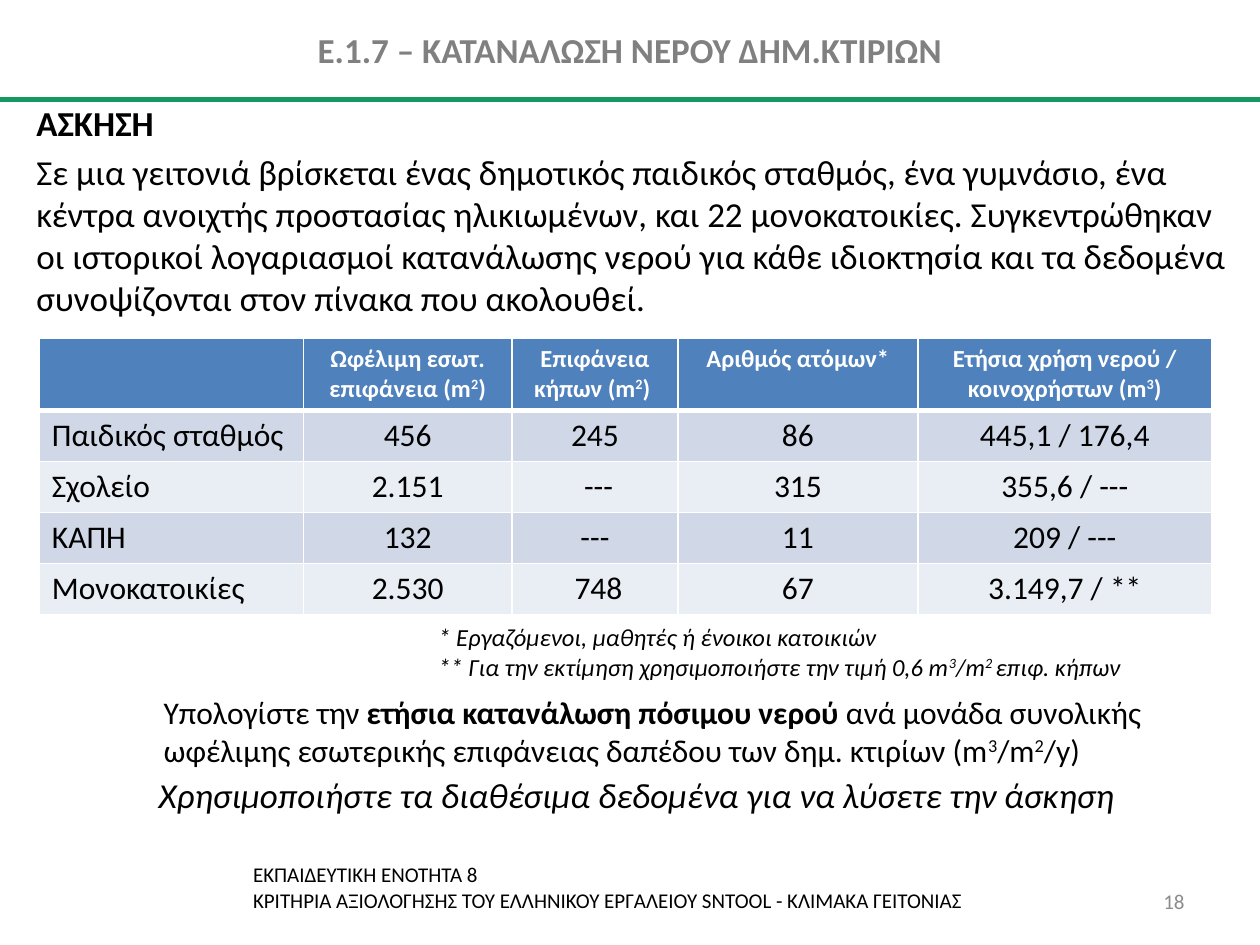
import pptx
import pptx.dml.color
import pptx.enum.shapes
import pptx.enum.text
import pptx.oxml
import pptx.util
from lxml import etree

Pt = pptx.util.Pt
ALIGN = pptx.enum.text.PP_ALIGN
ANCHOR = pptx.enum.text.MSO_ANCHOR
A = "http://schemas.openxmlformats.org/drawingml/2006/main"

HEADERS = [
    [],
    ["Ωφέλιμη εσωτ. επιφάνεια (m", ("2", "sup"), ")"],
    ["Επιφάνεια κήπων (m", ("2", "sup"), ") "],
    ["Αριθμός ατόμων*"],
    ["Ετήσια χρήση νερού / κοινοχρήστων (m", ("3", "sup"), ")"],
]
BUILDINGS = [
    ["Παιδικός σταθμός", "456", "245", "86", "445,1 / 176,4"],
    ["Σχολείο", "2.151", " ---", "315", "355,6 / ---"],
    ["ΚΑΠΗ", "132", "---", "11", "209 / ---"],
    ["Μονοκατοικίες", "2.530", " 748", "67", "3.149,7 / **"],
]
COLUMN_WIDTHS = [151, 119, 95, 137, 168]
HEADER_HEIGHT, ROW_HEIGHT = 41.4, 29.2


def rgb(value):
    return pptx.dml.color.RGBColor.from_string(value)


def write(paragraph, parts, size, color="000000", bold=False, italic=False,
          align=ALIGN.LEFT):
    """Fill a paragraph with plain strings and (text, "sup" or "bold") pairs."""
    paragraph.alignment = align
    font = paragraph.font
    font.name, font.size, font.italic = "Calibri", Pt(size), italic
    font.color.rgb = rgb(color)
    if not any(part[1] == "bold" for part in parts if isinstance(part, tuple)):
        font.bold = bold
    for part in parts:
        text, style = part if isinstance(part, tuple) else (part, None)
        run = paragraph.add_run()
        run.text = text
        if style == "sup":
            run.font._element.set("baseline", "30000")
        elif style == "bold":
            run.font.bold = True


def add_frame(slide, left, top, width, height):
    frame = slide.shapes.add_textbox(Pt(left), Pt(top), Pt(width), Pt(height)).text_frame
    frame.word_wrap = True
    return frame


def add_header(slide, left, top, width, height):
    title = slide.shapes.title
    title.left, title.top, title.width, title.height = map(Pt, (left, top, width, height))
    title.text_frame.vertical_anchor = ANCHOR.MIDDLE
    write(title.text_frame.paragraphs[0], ["Ε.1.7 – ΚΑΤΑΝΑΛΩΣΗ ΝΕΡΟΥ ΔΗΜ.ΚΤΙΡΙΩΝ"], 20,
          "808080", bold=True, align=ALIGN.CENTER)
    # Green rule under the title
    rule = slide.shapes.add_connector(
        pptx.enum.shapes.MSO_CONNECTOR.STRAIGHT,
        Pt(left), Pt(top + height), Pt(left + width), Pt(top + height))
    rule.line.color.rgb = rgb("159961")
    rule.line.width = Pt(3)
    etree.SubElement(rule._element.spPr, f"{{{A}}}effectLst")


def add_exercise(slide, left, top, width, height):
    frame = add_frame(slide, left, top, width, height)
    heading = frame.paragraphs[0]
    heading.line_spacing = 0.8
    write(heading, ["ΑΣΚΗΣΗ"], 20, bold=True)
    story = frame.add_paragraph()
    story.space_before = Pt(4)
    write(story, [
        "Σε μια γειτονιά βρίσκεται ένας δημοτικός παιδικός σταθμός, ένα γυμνάσιο, ένα "
        "κέντρα ανοιχτής προστασίας ηλικιωμένων, και 22 μονοκατοικίες. Συγκεντρώθηκαν "
        "οι ιστορικοί λογαριασμοί κατανάλωσης νερού για κάθε ιδιοκτησία και τα δεδομένα "
        "συνοψίζονται στον πίνακα που ακολουθεί."], 20)


def set_borders(cell, top, bottom):
    properties = cell._tc.get_or_add_tcPr()
    widths = {"lnL": 1, "lnR": 1, "lnT": top, "lnB": bottom}
    for index, (side, width) in enumerate(widths.items()):
        properties.insert(index, pptx.oxml.parse_xml(
            f'<a:{side} xmlns:a="{A}" w="{Pt(width)}"><a:solidFill>'
            f'<a:srgbClr val="FFFFFF"/></a:solidFill></a:{side}>'))


def add_consumption_table(slide, left, top):
    row_count = len(BUILDINGS) + 1
    table = slide.shapes.add_table(
        row_count, len(COLUMN_WIDTHS), Pt(left), Pt(top), Pt(sum(COLUMN_WIDTHS)),
        Pt(HEADER_HEIGHT + ROW_HEIGHT * len(BUILDINGS))).table
    for column, width in zip(table.columns, COLUMN_WIDTHS):
        column.width = Pt(width)
    for r, row in enumerate(table.rows):
        row.height = Pt(ROW_HEIGHT if r else HEADER_HEIGHT)
        for c, cell in enumerate(row.cells):
            cell.fill.solid()
            paragraph = cell.text_frame.paragraphs[0]
            if r == 0:
                cell.fill.fore_color.rgb = rgb("4F81BD")
                write(paragraph, HEADERS[c], 14, "FFFFFF", bold=True, align=ALIGN.CENTER)
            else:
                cell.fill.fore_color.rgb = rgb("D0D8E8" if r % 2 else "E9EDF4")
                write(paragraph, [BUILDINGS[r - 1][c]], 18,
                      align=ALIGN.CENTER if c else ALIGN.LEFT)
                if c < len(COLUMN_WIDTHS) - 1:
                    cell.vertical_anchor = ANCHOR.MIDDLE
            set_borders(cell, top=3 if r == 1 else 1, bottom=1 if r else 3)


def add_table_notes(slide, left, top, width, height):
    frame = add_frame(slide, left, top, width, height)
    write(frame.paragraphs[0], ["* Εργαζόμενοι, μαθητές ή ένοικοι κατοικιών"], 14, italic=True)
    write(frame.add_paragraph(), [
        "** Για την εκτίμηση χρησιμοποιήστε την τιμή 0,6 m", ("3", "sup"), "/m",
        ("2 ", "sup"), "επιφ. κήπων"], 14, italic=True)


def add_question(slide, left, top, width, height):
    question = add_frame(slide, left, top, width, height).paragraphs[0]
    question.space_after = Pt(6)
    write(question, [
        "Υπολογίστε την ", ("ετήσια κατανάλωση πόσιμου νερού ", "bold"),
        "ανά μονάδα συνολικής ωφέλιμης εσωτερικής επιφάνειας δαπέδου των δημ. κτιρίων (m",
        ("3", "sup"), "/m", ("2", "sup"), "/y)"], 18)


def add_hint(slide, left, top, width, height):
    write(add_frame(slide, left, top, width, height).paragraphs[0],
          ["Χρησιμοποιήστε τα διαθέσιμα δεδομένα για να λύσετε την άσκηση"], 20,
          italic=True, align=ALIGN.CENTER)


def add_footer(slide, left, top, width, height):
    unit = add_frame(slide, left, top, 489, height).paragraphs[0]
    write(unit, ["ΕΚΠΑΙΔΕΥΤΙΚΗ ΕΝΟΤΗΤΑ 8"], 12)
    unit.add_line_break()
    unit.add_run().text = ("ΚΡΙΤΗΡΙΑ ΑΞΙΟΛΟΓΗΣΗΣ ΤΟΥ ΕΛΛΗΝΙΚΟΥ ΕΡΓΑΛΕΙΟΥ SNTOOL - "
                           "ΚΛΙΜΑΚΑ ΓΕΙΤΟΝΙΑΣ")
    # Slide number at the right end
    number = add_frame(slide, left + width - 48, top + 11.5, 48, 29)
    number.vertical_anchor = ANCHOR.MIDDLE
    write(number.paragraphs[0], ["18"], 12, "8C8C8C", align=ALIGN.RIGHT)


def main():
    deck = pptx.Presentation()
    deck.slide_width, deck.slide_height = Pt(720), Pt(540)
    slide = deck.slides.add_slide(deck.slide_layouts[5])
    add_header(slide, 0, 0, 720, 57)
    add_exercise(slide, 13.7, 59, 700.5, 130)
    add_consumption_table(slide, 22.5, 193)
    add_table_notes(slide, 243.5, 352, 440, 41)
    add_question(slide, 86.4, 392.4, 618.5, 52)
    add_hint(slide, 13.7, 438.5, 700.5, 32)
    add_footer(slide, 137.5, 489, 546.5, 36)
    deck.save("out.pptx")


if __name__ == "__main__":
    main()
